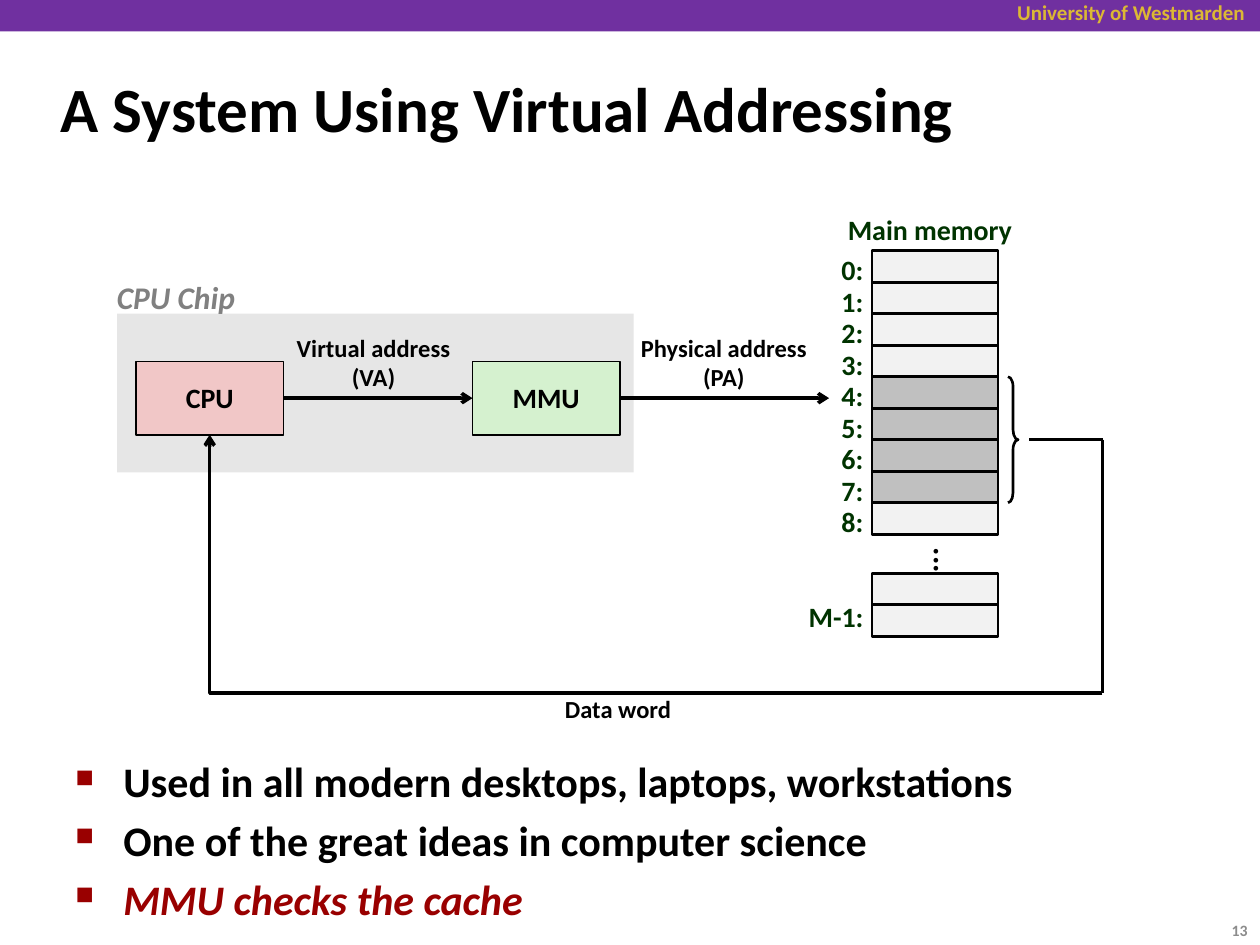
from dataclasses import dataclass

from lxml import etree
from pptx import Presentation
from pptx import util as u
from pptx.dml.color import RGBColor
from pptx.enum import shapes, text
from pptx.oxml import ns

Inches = u.Inches


@dataclass
class Theme:
    font: str = "Calibri"
    purple: str = "7030A0"
    gold: str = "DCB834"
    black: str = "000000"
    red: str = "990000"
    green: str = "003300"
    chip: str = "E6E6E6"
    chip_name: str = "808080"
    number: str = "8C8C8C"
    cpu: str = "F1C7C7"
    mmu: str = "D5F1CF"
    cell: str = "F2F2F2"
    used_cell: str = "C0C0C0"
    title_size: int = 36
    body_size: int = 24
    large: int = 18
    label: int = 16
    small: int = 14
    header: int = 12
    tiny: int = 9


theme = Theme()
LEFT, CENTER, RIGHT = text.PP_ALIGN.LEFT, text.PP_ALIGN.CENTER, text.PP_ALIGN.RIGHT
TOP, MIDDLE = text.MSO_ANCHOR.TOP, text.MSO_ANCHOR.MIDDLE


def write(box, words, size=theme.label, color=theme.black, align=CENTER, anchor=MIDDLE,
          spacing=None, before=None, italic=False, wrap=False):
    frame = box.text_frame
    frame.text = words
    frame.word_wrap = wrap
    frame.auto_size = text.MSO_AUTO_SIZE.NONE
    frame.vertical_anchor = anchor
    for para in frame.paragraphs:
        para.alignment = align
        para.line_spacing = spacing
        para.space_before = None if before is None else u.Pt(before)
        for span in para.runs:
            span.font.name = theme.font
            span.font.size = u.Pt(size)
            span.font.bold = True
            span.font.italic = italic
            span.font.color.rgb = RGBColor.from_string(color)


def connect(page, start, end, kind=shapes.MSO_CONNECTOR.STRAIGHT, arrow=False):
    line = page.shapes.add_connector(kind, *map(Inches, start + end))
    line.line.width = u.Pt(2)
    line.line.color.rgb = RGBColor.from_string(theme.black)
    if arrow:
        etree.SubElement(line.line._get_or_add_ln(), ns.qn("a:tailEnd"), type="arrow")
    etree.SubElement(line.element.spPr, ns.qn("a:effectLst"))
    return line


deck = Presentation()
deck.slide_width, deck.slide_height = Inches(10), Inches(7.5)
page = deck.slides.add_slide(deck.slide_layouts[5])

title = page.shapes.title
title.left, title.top, title.width, title.height = map(Inches, (0.38, 0.42, 9.53, 0.86))
write(title, "A System Using Virtual Addressing", size=theme.title_size, align=LEFT, wrap=True)

memory_left, memory_top, row = 6.92, 1.99, 0.25
cell_tops = [memory_top + row * index for index in range(9)] + [4.55, 4.8]
blocks = [
    ((0, 0, 10, 0.25), theme.purple, 0, ""),
    ((0.93, 2.49, 4.1, 1.26), theme.chip, 0, ""),
    ((1.08, 2.87, 1.17, 0.58), theme.cpu, 1, "CPU"),
    ((3.75, 2.87, 1.17, 0.58), theme.mmu, 1, "MMU"),
]
for index, top in enumerate(cell_tops):
    fill = theme.used_cell if 4 <= index <= 7 else theme.cell
    blocks.append(((memory_left, top, 1, row), fill, 1.5, ""))

units = {}
for place, fill, outline, name in blocks:
    box = page.shapes.add_shape(shapes.MSO_SHAPE.RECTANGLE, *map(Inches, place))
    box.shadow.inherit = False
    box.fill.solid()
    box.fill.fore_color.rgb = RGBColor.from_string(fill)
    if outline:
        box.line.width = u.Pt(outline)
        box.line.color.rgb = RGBColor.from_string(theme.black)
    else:
        box.line.fill.background()
    if name:
        write(box, name, spacing=0.98)
        units[name] = box

brace = page.shapes.add_shape(
    shapes.MSO_SHAPE.RIGHT_BRACE, Inches(8), Inches(memory_top + 4 * row), Inches(0.08), Inches(4 * row))
brace.adjustments[0], brace.adjustments[1] = 1, 0.5
brace.shadow.inherit = False
brace.fill.background()
brace.line.width = u.Pt(1.5)
brace.line.color.rgb = RGBColor.from_string(theme.black)

memory_style = dict(color=theme.green, anchor=TOP, spacing=0.88, before=6)
caption_style = dict(size=theme.small, spacing=0.98)
labels = [
    ("University of Westmarden", (7.33, -0.05, 2.65, 0.3),
     dict(size=theme.header, color=theme.gold, align=RIGHT, anchor=TOP, wrap=True)),
    ("CPU Chip", (0.83, 2.16, 1.16, 0.4),
     dict(size=theme.large, color=theme.chip_name, align=LEFT, anchor=TOP, italic=True)),
    ("Main memory", (6.62, 1.67, 1.52, 0.33), memory_style),
    ("M-1:", (6.32, 4.74, 0.64, 0.33), dict(memory_style, align=LEFT)),
    ("Virtual address\n(VA)", (2.25, 2.6, 1.43, 0.57), caption_style),
    ("Physical address\n(PA)", (4.98, 2.6, 1.53, 0.57), caption_style),
    ("Data word", (4.38, 5.47, 1.05, 0.33), caption_style),
    ("13", (9.33, 7.18, 0.67, 0.4),
     dict(size=theme.tiny, color=theme.number, align=RIGHT, wrap=True)),
]
for index in range(9):
    labels.append((f"{index}:", (6.58, cell_tops[index], 0.37, 0.33), dict(memory_style, align=LEFT)))
for words, place, style in labels:
    write(page.shapes.add_textbox(*map(Inches, place)), words, **style)

dots = page.shapes.add_textbox(*map(Inches, (7, 4.25, 1, 0.25)))
write(dots, "...", size=theme.large, spacing=0.98)
dots.element.txBody.bodyPr.set("vert", "eaVert")

virtual = connect(page, (2.25, 3.16), (3.75, 3.16), arrow=True)
virtual.begin_connect(units["CPU"], 3)
virtual.end_connect(units["MMU"], 1)
physical = connect(page, (4.92, 3.16), (6.58, 3.16), arrow=True)
physical.begin_connect(units["MMU"], 3)
connect(page, (8.17, 3.49), (8.75, 3.49))
connect(page, (8.75, 3.49), (8.75, 5.5))
data_word = connect(page, (8.75, 5.5), (1.67, 3.45), kind=shapes.MSO_CONNECTOR.ELBOW, arrow=True)
data_word.element.spPr.find(ns.qn("a:prstGeom")).set("prst", "bentConnector2")
data_word.end_connect(units["CPU"], 2)

body = page.shapes.add_textbox(*map(Inches, (0.5, 5.95, 9.09, 1.38)))
points = [
    "Used in all modern desktops, laptops, workstations",
    "One of the great ideas in computer science",
    "MMU checks the cache",
]
write(body, "\n".join(points), size=theme.body_size, align=LEFT, anchor=TOP, before=4.8, wrap=True)
for para in body.text_frame.paragraphs:
    props = para._p.get_or_add_pPr()
    props.set("marL", str(Inches(0.38)))
    props.set("indent", str(Inches(-0.38)))
    bullet_color = etree.SubElement(props, ns.qn("a:buClr"))
    etree.SubElement(bullet_color, ns.qn("a:srgbClr"), val=theme.red)
    etree.SubElement(props, ns.qn("a:buSzPct"), val="60000")
    etree.SubElement(props, ns.qn("a:buChar"), char="■")
last_span = body.text_frame.paragraphs[-1].runs[0]
last_span.font.italic = True
last_span.font.color.rgb = RGBColor.from_string(theme.red)

deck.save("out.pptx")
